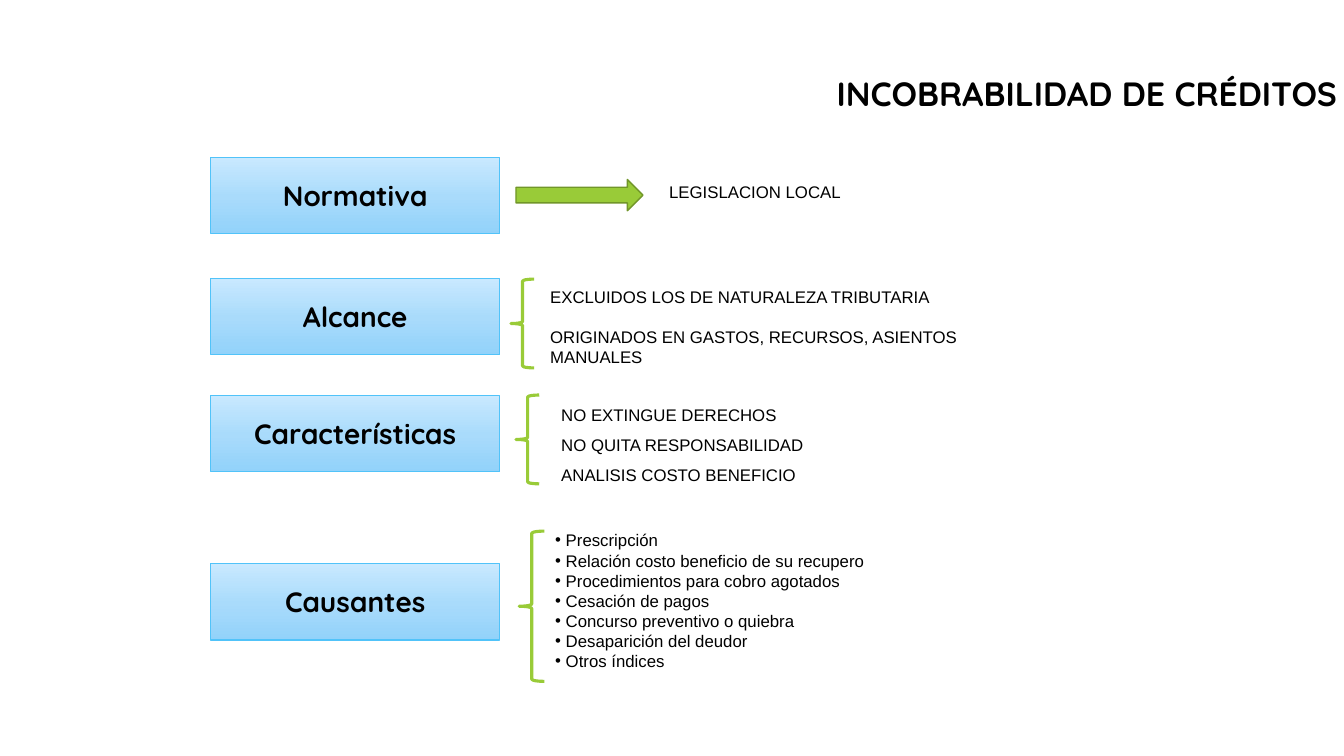
from copy import deepcopy
from dataclasses import dataclass

from lxml import etree
from pptx import Presentation
from pptx.dml.color import RGBColor
from pptx.enum.shapes import MSO_SHAPE
from pptx.enum.text import MSO_ANCHOR, MSO_AUTO_SIZE, PP_ALIGN
from pptx.oxml.ns import qn
from pptx.util import Pt

RECT = MSO_SHAPE.RECTANGLE
BRACE = MSO_SHAPE.LEFT_BRACE
ARROW = MSO_SHAPE.RIGHT_ARROW
TOP, MIDDLE = MSO_ANCHOR.TOP, MSO_ANCHOR.MIDDLE
LEFT, CENTER = PP_ALIGN.LEFT, PP_ALIGN.CENTER
GROW = MSO_AUTO_SIZE.SHAPE_TO_FIT_TEXT
TITLE_ONLY = 5


@dataclass(frozen=True)
class Theme:
    text: str = "000000"
    box_line: str = "51C3F9"
    box_stops: tuple = ((0, "C9E9FF"), (0.52, "A9DBFB"), (1, "92D2FA"))
    green: str = "99CB38"
    green_dark: str = "719629"
    heading_font: str = "Quicksand"
    body_font: str = "Arial"
    title_size: float = 24
    box_size: float = 20
    body_size: float = 12


@dataclass(frozen=True)
class Area:
    left: float
    top: float
    width: float
    height: float


@dataclass(frozen=True)
class Note:
    area: Area
    lines: tuple
    bulleted: bool = False


@dataclass(frozen=True)
class Topic:
    name: str
    top: float
    marker: int
    marker_area: Area
    notes: tuple


THEME = Theme()
BOX_LEFT, BOX_WIDTH, BOX_HEIGHT = 150.5, 206.6, 54.7
LINE_HEIGHT = 21.8
BULLET_INDENT = 7.5
TITLE_AREA = Area(590.4, 48.2, 380.9, 36)

TOPICS = (
    Topic("Normativa", 112.3, ARROW, Area(368.6, 128.2, 90.7, 22.3), (
        Note(Area(470.9, 126, 238.3, LINE_HEIGHT), ("LEGISLACION LOCAL",)),
    )),
    Topic("Alcance", 198.7, BRACE, Area(365, 199.4, 16.6, 63.4), (
        Note(Area(385.9, 201.6, 311.8, LINE_HEIGHT),
             ("EXCLUIDOS LOS DE NATURALEZA TRIBUTARIA",)),
        Note(Area(385.9, 229.7, 311.8, 36),
             ("ORIGINADOS EN GASTOS, RECURSOS, ASIENTOS MANUALES",)),
    )),
    Topic("Características", 282.2, BRACE, Area(368.6, 282.2, 16.6, 63.4), (
        Note(Area(393.8, 285.8, 260.6, LINE_HEIGHT), ("NO EXTINGUE DERECHOS",)),
        Note(Area(393.8, 306.7, 260.6, LINE_HEIGHT), ("NO QUITA RESPONSABILIDAD",)),
        Note(Area(393.8, 328.7, 193, LINE_HEIGHT), ("ANALISIS COSTO BENEFICIO",)),
    )),
    Topic("Causantes", 402.5, BRACE, Area(370.8, 379.4, 18, 107.3), (
        Note(Area(389.5, 375.1, 294.5, 108.7), (
            "Prescripción",
            "Relación costo beneficio de su recupero",
            "Procedimientos para cobro agotados",
            "Cesación de pagos",
            "Concurso preventivo o quiebra",
            "Desaparición del deudor",
            "Otros índices",
        ), bulleted=True),
    )),
)

TITLE_FORMAT = {"name": THEME.heading_font, "size": Pt(THEME.title_size), "bold": True}
BOX_FORMAT = {"name": THEME.heading_font, "size": Pt(THEME.box_size), "bold": True}
BODY_FORMAT = {"name": THEME.body_font, "size": Pt(THEME.body_size), "bold": False}


def rgb(value: str) -> RGBColor:
    return RGBColor.from_string(value)


def points(area: Area) -> tuple:
    return Pt(area.left), Pt(area.top), Pt(area.width), Pt(area.height)


def add_bullet(p) -> None:
    pPr = p._p.get_or_add_pPr()
    pPr.set("marL", str(Pt(BULLET_INDENT)))
    pPr.set("indent", str(-Pt(BULLET_INDENT)))
    etree.SubElement(pPr, qn("a:buFont")).set("typeface", THEME.body_font)
    etree.SubElement(pPr, qn("a:buChar")).set("char", "•")


def write(tf, lines: tuple, font_format: dict, align: int = LEFT,
          anchor: int = TOP, bulleted: bool = False) -> None:
    tf.word_wrap = True
    tf.vertical_anchor = anchor
    for i, line in enumerate(lines):
        p = tf.paragraphs[0] if i == 0 else tf.add_paragraph()
        p.alignment = align
        if bulleted:
            add_bullet(p)
        r = p.add_run()
        r.text = line
        for key, value in font_format.items():
            setattr(r.font, key, value)
        r.font.color.rgb = rgb(THEME.text)


def add_title(s, text: str) -> None:
    sp = s.shapes.title
    sp.left, sp.top, sp.width, sp.height = points(TITLE_AREA)
    write(sp.text_frame, (text,), TITLE_FORMAT)
    sp.text_frame.auto_size = GROW


def add_outlined(s, kind: int, area: Area, line: str, width: float):
    sp = s.shapes.add_shape(kind, *points(area))
    sp.shadow.inherit = False
    sp.line.color.rgb = rgb(line)
    sp.line.width = Pt(width)
    return sp


def add_box(s, topic: Topic) -> None:
    area = Area(BOX_LEFT, topic.top, BOX_WIDTH, BOX_HEIGHT)
    sp = add_outlined(s, RECT, area, THEME.box_line, 0.75)
    sp.fill.gradient()
    sp.fill.gradient_angle = 270
    stops = sp._element.spPr.find(qn("a:gradFill")).find(qn("a:gsLst"))
    stops.append(deepcopy(stops[-1]))
    for stop, (position, color) in zip(sp.fill.gradient_stops, THEME.box_stops):
        stop.position = position
        stop.color.rgb = rgb(color)
    write(sp.text_frame, (topic.name,), BOX_FORMAT, CENTER, MIDDLE)


def add_marker(s, topic: Topic) -> None:
    if topic.marker == ARROW:
        sp = add_outlined(s, ARROW, topic.marker_area, THEME.green_dark, 1)
        sp.fill.solid()
        sp.fill.fore_color.rgb = rgb(THEME.green)
    else:
        sp = add_outlined(s, BRACE, topic.marker_area, THEME.green, 2.25)
        sp.fill.background()


def add_note(s, note: Note) -> None:
    sp = s.shapes.add_textbox(*points(note.area))
    write(sp.text_frame, note.lines, BODY_FORMAT, bulleted=note.bulleted)
    sp.text_frame.auto_size = GROW


def main() -> None:
    prs = Presentation()
    prs.slide_width, prs.slide_height = Pt(960), Pt(540)
    s = prs.slides.add_slide(prs.slide_layouts[TITLE_ONLY])
    add_title(s, "INCOBRABILIDAD DE CRÉDITOS")
    for topic in TOPICS:
        add_box(s, topic)
        add_marker(s, topic)
        for note in topic.notes:
            add_note(s, note)
    prs.save("out.pptx")


if __name__ == "__main__":
    main()
